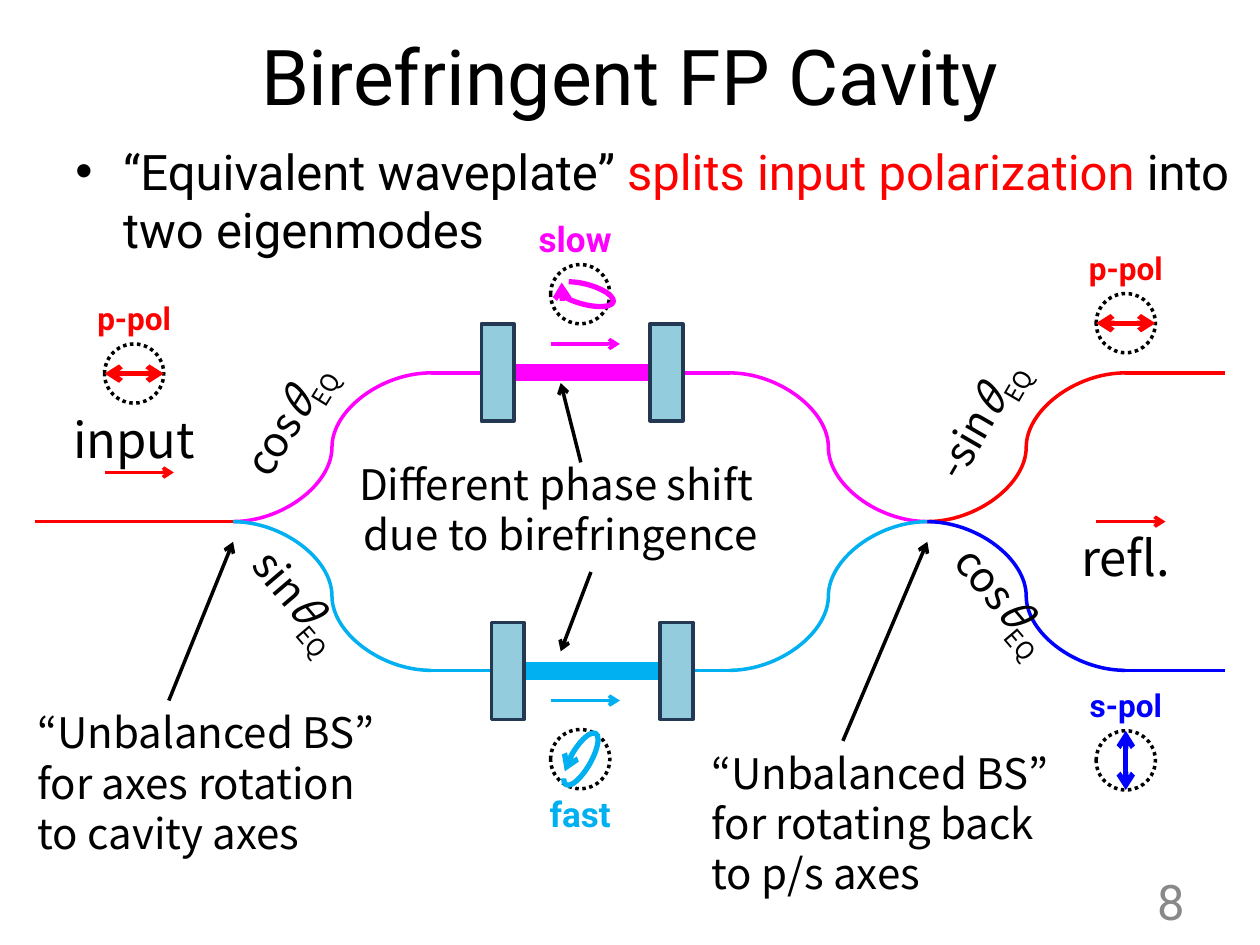
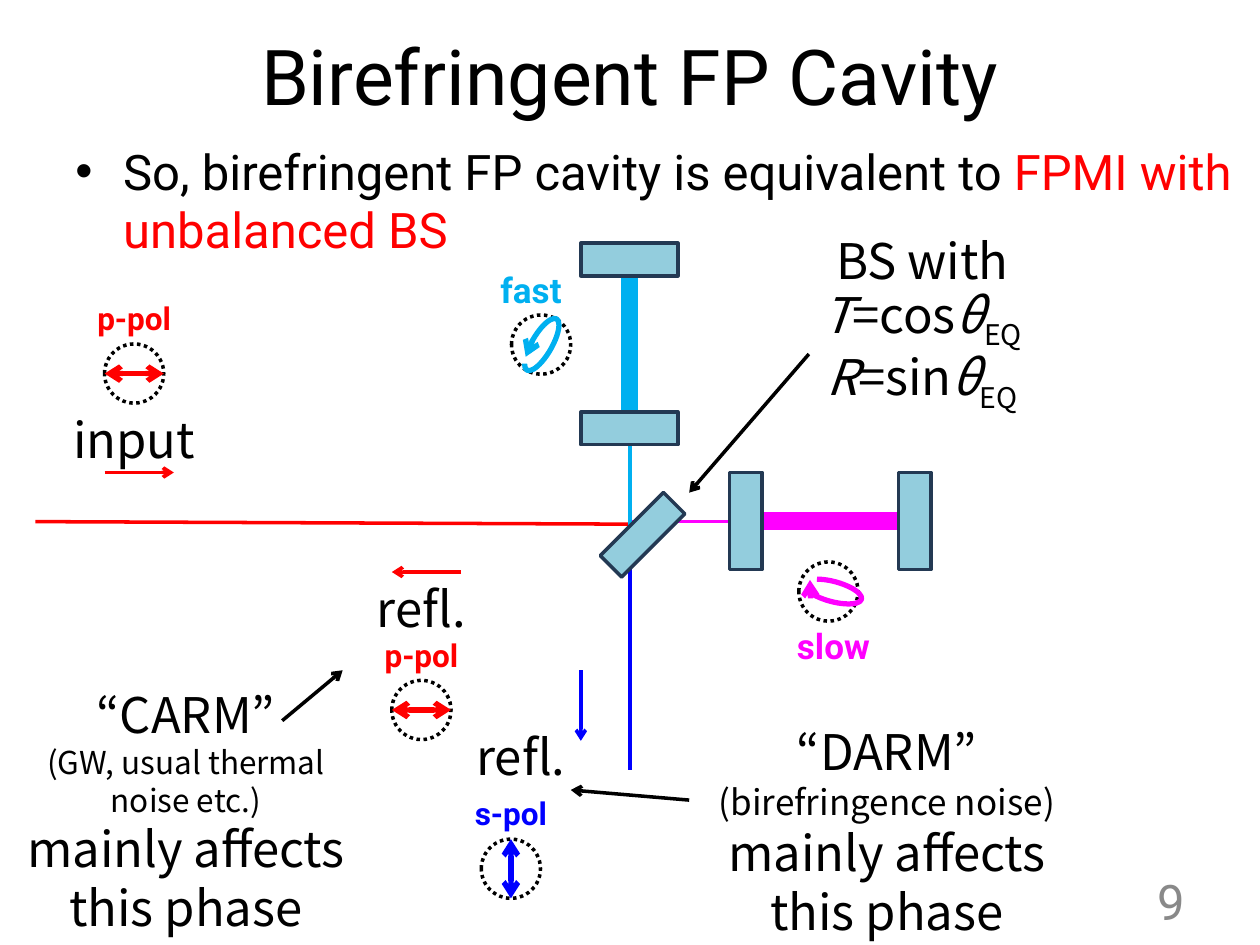
from lxml.etree import SubElement
from pptx import Presentation
from pptx.dml.color import RGBColor
from pptx.enum.dml import MSO_LINE
from pptx.enum.shapes import MSO_CONNECTOR as LINK, MSO_SHAPE as SHAPE
from pptx.enum.text import MSO_ANCHOR as ANCHOR, PP_ALIGN as ALIGN
from pptx.oxml.ns import qn
from pptx.util import Inches, Pt

BLACK = RGBColor(0x00, 0x00, 0x00)
RED = RGBColor(0xFF, 0x00, 0x00)
BLUE = RGBColor(0x00, 0x00, 0xFF)
MAGENTA = RGBColor(0xFF, 0x00, 0xFF)
CYAN = RGBColor(0x00, 0xB0, 0xF0)
GRAY = RGBColor(0x89, 0x89, 0x89)
MIRROR_FILL = RGBColor(0x93, 0xCD, 0xDD)
MIRROR_EDGE = RGBColor(0x23, 0x39, 0x53)

HEADING_FONT = "Roboto"
NOTE_FONT = "Noto Sans CJK JP"
LEADING = 1.2  # line pitch of the notes, in text sizes

RING = 0.47  # diameter of a polarization ring
MIRROR = (0.26, 0.77)  # thickness and height of a cavity mirror
MIRROR_PITCH = 1.34
ARM_WIDTH, ARM_RISE = 1.57, 1.18  # reach of one branch of a fork

# Name, colour, tilt and arrow end of each eigenmode
SLOW = ("slow", MAGENTA, 105, "tail")
FAST = ("fast", CYAN, 30, "head")


# Basic parts
def add_run(paragraph, words, size, font, color, bold=False, italic=False,
            subscript=False):
    run = paragraph.add_run()
    run.text = words
    run.font.size = Pt(size)
    run.font.name = font
    run.font.color.rgb = color
    run.font.bold = bold
    run.font.italic = italic
    props = run.font._element
    for script in ("a:ea", "a:cs"):
        SubElement(props, qn(script)).set("typeface", font)
    if subscript:
        props.set("baseline", "-25000")


def add_bullet(paragraph):
    props = paragraph._p.get_or_add_pPr()
    props.set("marL", str(Inches(0.38)))
    props.set("indent", str(-Inches(0.38)))
    SubElement(props, qn("a:buFont")).set("typeface", "Arial")
    SubElement(props, qn("a:buChar")).set("char", "•")


def add_text(slide, x, y, w, h, paragraphs, size=28, font=NOTE_FONT,
             color=BLACK, bold=False, align=ALIGN.CENTER, anchor=ANCHOR.TOP,
             inset=True, rotation=0, space_before=0, bullet=False):
    """Each paragraph is a string or a list of (words, run format) pairs."""
    box = slide.shapes.add_textbox(*map(Inches, (x, y, w, h)))
    box.rotation = rotation
    frame = box.text_frame
    frame.word_wrap = True
    frame.vertical_anchor = anchor
    if not inset:
        frame.margin_left = frame.margin_right = 0
        frame.margin_top = frame.margin_bottom = 0
    for i, runs in enumerate(paragraphs):
        paragraph = frame.add_paragraph() if i else frame.paragraphs[0]
        paragraph.alignment = align
        paragraph.space_before = Pt(space_before)
        runs = [(runs, {})] if isinstance(runs, str) else runs
        style = dict(size=size, font=font, color=color, bold=bold)
        if font == NOTE_FONT:
            tallest = max(form.get("size", size) for _, form in runs)
            paragraph.line_spacing = Pt(tallest * LEADING)
        if bullet:
            add_bullet(paragraph)
        for words, form in runs:
            add_run(paragraph, words, **{**style, **form})


def add_arrowheads(shape, ends):
    outline = shape._element.spPr.find(qn("a:ln"))
    for end in ends:
        SubElement(outline, qn(f"a:{end}End")).set("type", "arrow")


def add_line(slide, start, end, color, width=2, ends=(), kind=LINK.STRAIGHT):
    line = slide.shapes.add_connector(kind, *map(Inches, (*start, *end)))
    line.line.color.rgb = color
    line.line.width = Pt(width)
    add_arrowheads(line, ends)
    SubElement(line._element.spPr, qn("a:effectLst"))


def add_arrow(slide, start, end, color=BLACK):
    add_line(slide, start, end, color, ends=["tail"])


def add_outline(slide, kind, x, y, w, h, color, width=2, fill=None, rotation=0):
    shape = slide.shapes.add_shape(kind, *map(Inches, (x, y, w, h)))
    shape.shadow.inherit = False
    shape.rotation = rotation
    if fill is None:
        shape.fill.background()
    else:
        shape.fill.solid()
        shape.fill.fore_color.rgb = fill
    shape.line.color.rgb = color
    shape.line.width = Pt(width)
    return shape


def add_mirror(slide, x, y, w, h, rotation=0):
    add_outline(slide, SHAPE.RECTANGLE, x, y, w, h, MIRROR_EDGE,
                fill=MIRROR_FILL, rotation=rotation)


def theta_term(function):
    return [(function, {}), ("θ", {"italic": True}), ("EQ", {"subscript": True})]


# Polarization symbols
def add_ring(slide, x, y):
    ring = add_outline(slide, SHAPE.OVAL, x, y, RING, RING, BLACK)
    ring.line.dash_style = MSO_LINE.ROUND_DOT


def add_pol_name(slide, x, y, w, name, color, size):
    add_text(slide, x, y, w, 0.39, [name], size=size, font=HEADING_FONT,
             color=color, bold=True, anchor=ANCHOR.MIDDLE, inset=False)


def add_linear_pol(slide, x, y, name):
    """Ring at (x, y) with a two-headed arrow, and its name above."""
    add_ring(slide, x, y)
    half = RING / 2
    if name == "p-pol":
        color, start, end = RED, (x + RING, y + half), (x, y + half)
    else:
        color, start, end = BLUE, (x + half, y + RING), (x + half, y)
    add_pol_name(slide, x - 0.16, y - 0.4, 0.79, name, color, 18)
    add_line(slide, start, end, color, 3, ["head", "tail"])


def add_eigenmode(slide, x, y, mode, name_shift, name_above):
    """Ring at (x, y) with a tilted ellipse, and its name above or below."""
    name, color, tilt, arrow_end = mode
    add_ring(slide, x, y)
    arc_x = x + (0.19 if mode is SLOW else 0.16)
    arc = add_outline(slide, SHAPE.ARC, arc_x, y, 0.16, RING, color, 3,
                      rotation=tilt)
    # Angles are held in 1/60000 degree, adjustments in 1/100000
    for i, degrees in enumerate((112.79, 101.89)):
        arc.adjustments[i] = degrees * 0.6
    add_arrowheads(arc, [arrow_end])
    name_y = y - 0.4 if name_above else y + RING
    add_pol_name(slide, x + RING / 2 - 0.5 + name_shift, name_y, 1, name, color, 20)


# Optical parts
def add_cavity(slide, x, y, color, vertical=False):
    """Two mirrors, the first with its corner at (x, y), and the beam between."""
    thick, tall = MIRROR
    if vertical:
        start, end = (x + tall / 2, y + thick), (x + tall / 2, y + MIRROR_PITCH)
        size, step = (tall, thick), (0, MIRROR_PITCH)
    else:
        start, end = (x + thick, y + tall / 2), (x + MIRROR_PITCH, y + tall / 2)
        size, step = (thick, tall), (MIRROR_PITCH, 0)
    add_line(slide, start, end, color, 10)
    for i in range(2):
        add_mirror(slide, x + i * step[0], y + i * step[1], *size)


def add_fork(slide, x, y, side, upper, lower):
    """Two curved branches from (x, y), to the right or (side -1) the left."""
    for rise, color in ((-ARM_RISE, upper), (ARM_RISE, lower)):
        add_line(slide, (x, y), (x + side * ARM_WIDTH, y + rise), color,
                 kind=LINK.CURVE)


def add_port_name(slide, x, y, name):
    add_text(slide, x, y, 1.57, 0.57, [name])


def add_input_port(slide, x, y):
    add_linear_pol(slide, x + 0.55, y + 0.4, "p-pol")
    add_port_name(slide, x, y + 0.87, "input")
    add_arrow(slide, (x + 0.55, y + 1.42), (x + 1.1, y + 1.42), RED)


# Shared frame of the slides
def add_frame(slide, number, statement):
    add_text(slide, 0.5, 1.07, 9.5, 1.42, [statement], font=HEADING_FONT,
             align=ALIGN.LEFT, space_before=5.6, bullet=True)
    add_text(slide, 0, -0.03, 10, 1.25, ["Birefringent FP Cavity"], size=44,
             font=HEADING_FONT, anchor=ANCHOR.MIDDLE)
    add_text(slide, 7.17, 6.95, 2.33, 0.4, [str(number)], font=HEADING_FONT,
             color=GRAY, align=ALIGN.RIGHT, anchor=ANCHOR.MIDDLE)


def build_waveplate_slide(slide):
    add_frame(slide, 8, [("“Equivalent waveplate” ", {}),
                         ("splits input polarization ", {"color": RED}),
                         ("into two eigenmodes", {})])
    axis, split, merge = 4.14, 1.85, 7.36
    upper, lower = axis - ARM_RISE, axis + ARM_RISE

    # Beams
    add_input_port(slide, 0.28, 2.33)
    add_line(slide, (0.28, axis), (split, axis), RED)
    add_fork(slide, split, axis, 1, MAGENTA, CYAN)
    add_fork(slide, merge, axis, -1, MAGENTA, CYAN)
    add_fork(slide, merge, axis, 1, RED, BLUE)
    for y, arm, output in ((upper, MAGENTA, RED), (lower, CYAN, BLUE)):
        add_line(slide, (split + ARM_WIDTH, y), (merge - ARM_WIDTH, y), arm)
        add_line(slide, (merge + ARM_WIDTH, y), (9.72, y), output)

    # Amplitudes along the branches
    for x, y, function, angle in ((1.39, 4.54, "sin", 49.7), (1.38, 3.1, "cos", 301.5),
                                  (6.87, 3.1, "-sin", 300.1), (6.99, 4.54, "cos", 49.7)):
        add_text(slide, x, y, 1.89, 0.5, [theta_term(function)], size=24,
                 rotation=angle)

    # Cavity arms
    add_cavity(slide, 3.82, 2.57, MAGENTA)
    add_cavity(slide, 3.9, 4.94, CYAN)
    for y, color in ((2.73, MAGENTA), (5.56, CYAN)):
        add_arrow(slide, (4.37, y), (4.92, y), color)
    add_eigenmode(slide, 4.37, 2.1, SLOW, -0.04, name_above=True)
    add_eigenmode(slide, 4.37, 5.79, FAST, 0, name_above=False)
    add_text(slide, 2.56, 3.59, 3.78, 0.91,
             ["Different phase shift ", "due to birefringence"], size=24)
    add_arrow(slide, (4.61, 3.67), (4.45, 3.04))
    add_arrow(slide, (4.69, 4.54), (4.45, 5.17))

    # Output ports
    add_linear_pol(slide, 8.7, 2.33, "p-pol")
    add_linear_pol(slide, 8.7, 5.8, "s-pol")
    add_arrow(slide, (8.7, axis), (9.25, axis), RED)
    add_port_name(slide, 8.15, axis, "refl.")

    # Notes on the beam splitters
    for x, y, tip, lines in (
            (0.2, 5.56, split, ["for axes rotation", "to cavity axes"]),
            (5.55, 5.88, merge, ["for rotating back", "to p/s axes"])):
        add_arrow(slide, (x + 1.14, y), (tip, 4.3))
        add_text(slide, x, y, 3.07, 1.31, ["“Unbalanced BS”", *lines],
                 size=24, align=ALIGN.LEFT)


def build_interferometer_slide(slide):
    axis, splitter = 4.14, 5

    # Beams
    add_line(slide, (splitter, axis), (splitter, 6.11), BLUE)
    add_line(slide, (splitter, axis), (7.13, axis), MAGENTA)
    add_frame(slide, 9, [("So, birefringent FP cavity is equivalent to ", {}),
                         ("FPMI with unbalanced BS", {"color": RED})])
    add_line(slide, (0.28, axis), (splitter, 4.16), RED)
    add_line(slide, (splitter, 4.39), (splitter, 2.41), CYAN)
    add_input_port(slide, 0.28, 2.33)

    # Beam splitter and cavity arms
    add_mirror(slide, 4.98, 3.89, 0.24, 0.71, rotation=45)
    add_cavity(slide, 4.61, 1.93, CYAN, vertical=True)
    add_cavity(slide, 5.79, 3.75, MAGENTA)
    add_eigenmode(slide, 6.34, 4.46, SLOW, 0.04, name_above=False)
    add_eigenmode(slide, 4.06, 2.5, FAST, -0.08, name_above=True)
    add_text(slide, 6.18, 1.78, 2.28, 1.51,
             ["BS with",
              [("T", {"italic": True}), *theta_term("=cos")],
              [("R", {"italic": True}), *theta_term("=sin")]], space_before=2)
    add_arrow(slide, (6.42, 2.81), (5.47, 3.91))

    # Output ports
    add_arrow(slide, (3.66, 4.54), (3.11, 4.54), RED)
    add_port_name(slide, 2.56, 4.54, "refl.")
    add_linear_pol(slide, 3.11, 5.4, "p-pol")
    add_arrow(slide, (4.61, 5.32), (4.61, 5.88), BLUE)
    add_port_name(slide, 3.35, 5.72, "refl.")
    add_linear_pol(slide, 3.82, 6.66, "s-pol")

    # Notes on the two signals
    for x, y, w, h, signal, source, size in (
            (0, 5.38, 2.95, 2.12, "“CARM”", "(GW, usual thermal noise etc.)", 18),
            (5.31, 5.68, 3.46, 1.85, "“DARM”", "(birefringence noise)", 20)):
        add_text(slide, x, y, w, h,
                 [signal, [(source, {"size": size})], "mainly affects this phase"])
    add_arrow(slide, (2.24, 5.72), (2.72, 5.32))
    add_arrow(slide, (5.47, 6.35), (4.53, 6.27))


def main():
    deck = Presentation()
    deck.slide_width, deck.slide_height = Inches(10), Inches(7.5)
    for build in (build_waveplate_slide, build_interferometer_slide):
        build(deck.slides.add_slide(deck.slide_layouts[6]))
    deck.save("out.pptx")


if __name__ == "__main__":
    main()
